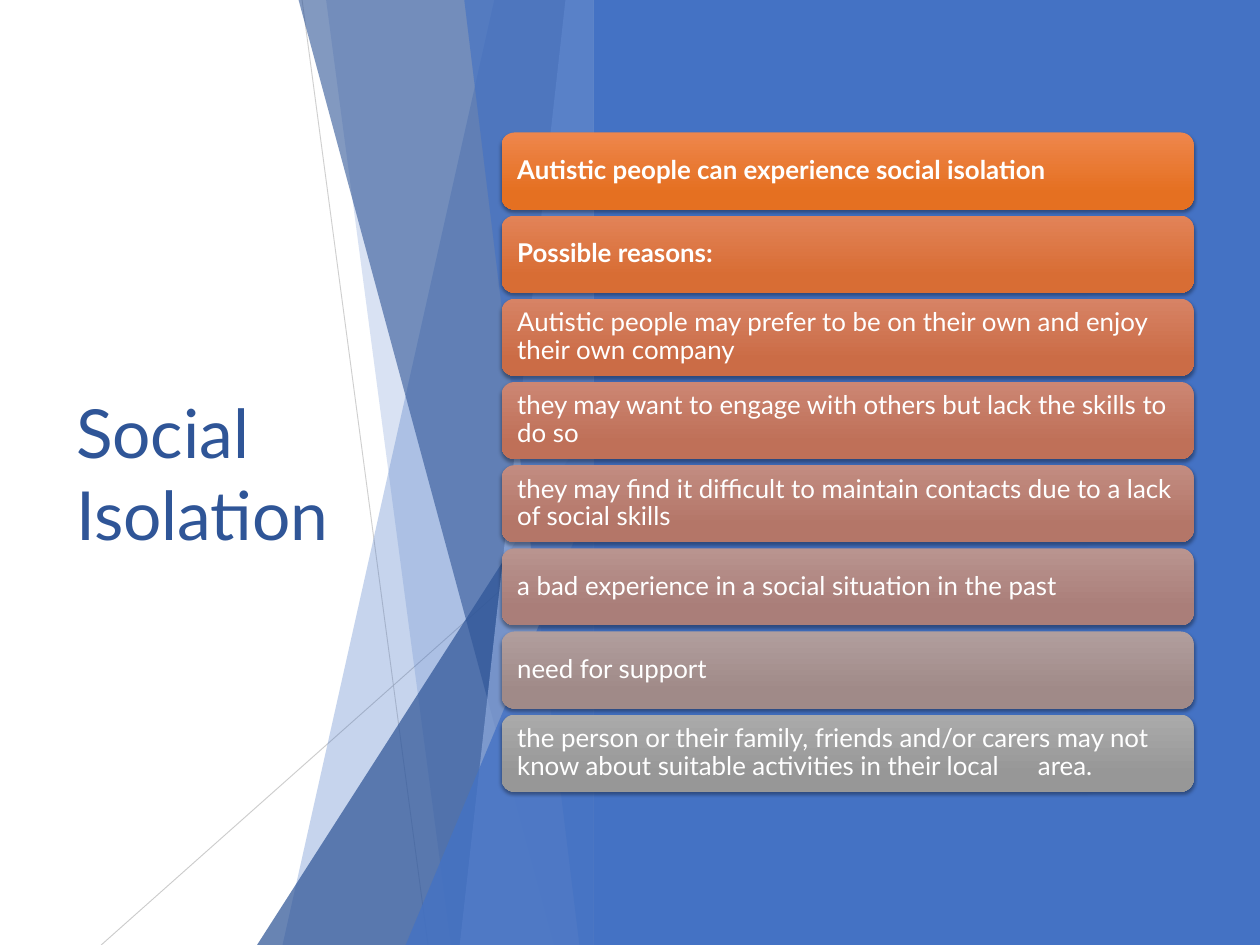
from dataclasses import dataclass

from lxml.etree import SubElement
from pptx import Presentation
from pptx.dml.color import RGBColor
from pptx.enum.shapes import MSO_CONNECTOR, MSO_SHAPE
from pptx.enum.text import MSO_ANCHOR, MSO_AUTO_SIZE, PP_ALIGN
from pptx.oxml.ns import qn
from pptx.shapes.autoshape import Shape
from pptx.shapes.base import BaseShape
from pptx.slide import Slide
from pptx.util import Cm, Pt

BLUE = RGBColor(0x44, 0x72, 0xC4)
NAVY = RGBColor(0x2F, 0x55, 0x97)
SKY = RGBColor(0x8F, 0xAA, 0xDC)
SILVER = RGBColor(0xBF, 0xBF, 0xBF)
WHITE = RGBColor(0xFF, 0xFF, 0xFF)

FONT = "Lato"
WIDTH, HEIGHT = 36.12, 27.1
PANEL_LEFT = 17.02
BAR_LEFT, BAR_TOP, BAR_WIDTH, BAR_HEIGHT = 14.38, 3.8, 19.84, 2.21
BAR_PITCH = 2.385
AREA_TAB = 14.93


@dataclass
class Ray:
    start: tuple[float, float]
    end: tuple[float, float]
    opacity: int


@dataclass
class Facet:
    top_left: float
    bottom_left: float
    color: RGBColor
    opacity: int


@dataclass
class Wedge:
    left: float
    top: float
    color: RGBColor
    opacity: int


@dataclass
class Bar:
    text: str
    light: RGBColor
    dark: RGBColor
    bold: bool = False


RAYS = [
    Ray((8.66, 0), (12.27, HEIGHT), 75),
    Ray((PANEL_LEFT, 14.55), (2.9, HEIGHT), 80),
]

FACETS = [
    Facet(14.17, 8.1, BLUE, 30),
    Facet(9.35, 12.93, BLUE, 20),
    Wedge(7.37, 12.04, NAVY, 72),
    Facet(8.56, 15.88, NAVY, 60),
    Facet(16.21, 13.18, SKY, 70),
    Facet(13.31, 16.61, BLUE, 65),
    Wedge(11.63, 14.17, BLUE, 80),
]

BARS = [
    Bar("Autistic people can experience social isolation",
        RGBColor(0xEE, 0x86, 0x4C), RGBColor(0xE5, 0x70, 0x21), True),
    Bar("Possible reasons:",
        RGBColor(0xE2, 0x83, 0x58), RGBColor(0xD8, 0x6D, 0x34), True),
    Bar("Autistic people may prefer to be on their own and enjoy their own company",
        RGBColor(0xD7, 0x83, 0x65), RGBColor(0xCB, 0x6C, 0x46)),
    Bar("they may want to engage with others but lack the skills to do so",
        RGBColor(0xCC, 0x86, 0x73), RGBColor(0xBF, 0x70, 0x58)),
    Bar("they may find it difficult to maintain contacts due to a lack of social skills",
        RGBColor(0xC2, 0x8C, 0x81), RGBColor(0xB4, 0x76, 0x68)),
    Bar("a bad experience in a social situation in the past",
        RGBColor(0xB9, 0x94, 0x8F), RGBColor(0xAA, 0x7E, 0x79)),
    Bar("need for support",
        RGBColor(0xB1, 0x9E, 0x9D), RGBColor(0xA0, 0x8A, 0x88)),
    Bar("the person or their family, friends and/or carers may not know about "
        "suitable activities in their local\tarea.",
        RGBColor(0xAA, 0xAA, 0xAA), RGBColor(0x97, 0x97, 0x97)),
]


def set_opacity(shape: BaseShape, percent: int) -> None:
    color = next(shape._element.spPr.iter(qn("a:srgbClr")))
    SubElement(color, qn("a:alpha"), val=str(percent * 1000))


def paint(shape: Shape, color: RGBColor) -> None:
    shape.shadow.inherit = False
    shape.fill.solid()
    shape.fill.fore_color.rgb = color
    shape.line.fill.background()


def draw_ray(page: Slide, ray: Ray) -> None:
    line = page.shapes.add_connector(
        MSO_CONNECTOR.STRAIGHT, *map(Cm, ray.start + ray.end))
    line.line.color.rgb = SILVER
    line.line.width = Pt(0.75)
    set_opacity(line, ray.opacity)
    SubElement(line._element.spPr, qn("a:effectLst"))


def draw_facet(page: Slide, facet: Facet | Wedge) -> None:
    if isinstance(facet, Wedge):
        shape = page.shapes.add_shape(
            MSO_SHAPE.ISOSCELES_TRIANGLE, Cm(facet.left), Cm(facet.top),
            Cm(PANEL_LEFT - facet.left), Cm(HEIGHT - facet.top))
        shape.adjustments[0] = 1
    else:
        outline = page.shapes.build_freeform(Cm(facet.top_left), 0)
        outline.add_line_segments([
            (Cm(PANEL_LEFT), 0),
            (Cm(PANEL_LEFT), Cm(HEIGHT)),
            (Cm(facet.bottom_left), Cm(HEIGHT)),
        ])
        shape = outline.convert_to_shape()
    paint(shape, facet.color)
    set_opacity(shape, facet.opacity)


def add_bar_shadow(box: Shape) -> None:
    box.shadow.inherit = False
    effects = box._element.spPr.find(qn("a:effectLst"))
    shadow = SubElement(effects, qn("a:outerShdw"), blurRad=str(Pt(3)),
                        dist=str(Pt(2)), dir="5400000", rotWithShape="0")
    color = SubElement(shadow, qn("a:srgbClr"), val="000000")
    SubElement(color, qn("a:alpha"), val="35000")


def draw_bar(page: Slide, bar: Bar, top: float) -> None:
    box = page.shapes.add_shape(
        MSO_SHAPE.ROUNDED_RECTANGLE, Cm(BAR_LEFT), Cm(top),
        Cm(BAR_WIDTH), Cm(BAR_HEIGHT))
    box.line.fill.background()
    box.fill.gradient()
    box.fill.gradient_angle = 270
    for stop, color, position in zip(
            box.fill.gradient_stops, (bar.light, bar.dark), (0, 0.78)):
        stop.color.rgb = color
        stop.position = position
    add_bar_shadow(box)
    frame = box.text_frame
    frame.word_wrap = True
    frame.vertical_anchor = MSO_ANCHOR.MIDDLE
    frame.margin_left = frame.margin_right = Cm(0.34)
    frame.margin_top = frame.margin_bottom = Cm(0.34)
    frame.text = bar.text
    para = frame.paragraphs[0]
    para.alignment = PP_ALIGN.LEFT
    para.line_spacing = 0.9
    if "\t" in bar.text:
        tabs = SubElement(para._p.get_or_add_pPr(), qn("a:tabLst"))
        SubElement(tabs, qn("a:tab"), pos=str(Cm(AREA_TAB)), algn="l")
    para.font.name = FONT
    para.font.size = Pt(21)
    para.font.bold = bar.bold
    para.font.color.rgb = WHITE


def write_title(page: Slide) -> None:
    title = page.shapes.title
    title.left, title.top = Cm(1.93), Cm(5.46)
    title.width, title.height = Cm(10.52), Cm(16.18)
    frame = title.text_frame
    frame.text = "Social Isolation"
    frame.word_wrap = True
    frame.auto_size = MSO_AUTO_SIZE.NONE
    frame.vertical_anchor = MSO_ANCHOR.MIDDLE
    para = frame.paragraphs[0]
    para.alignment = PP_ALIGN.LEFT
    para.font.name = FONT
    para.font.size = Pt(55)
    para.font.color.rgb = NAVY


def main() -> None:
    deck = Presentation()
    deck.slide_width, deck.slide_height = Cm(WIDTH), Cm(HEIGHT)
    page = deck.slides.add_slide(deck.slide_layouts.get_by_name("Title Only"))
    write_title(page)
    for ray in RAYS:
        draw_ray(page, ray)
    for facet in FACETS:
        draw_facet(page, facet)
    panel = page.shapes.add_shape(
        MSO_SHAPE.RECTANGLE, Cm(PANEL_LEFT), 0, Cm(WIDTH - PANEL_LEFT), Cm(HEIGHT))
    paint(panel, BLUE)
    for row, bar in enumerate(BARS):
        draw_bar(page, bar, BAR_TOP + row * BAR_PITCH)
    deck.save("out.pptx")


if __name__ == "__main__":
    main()
